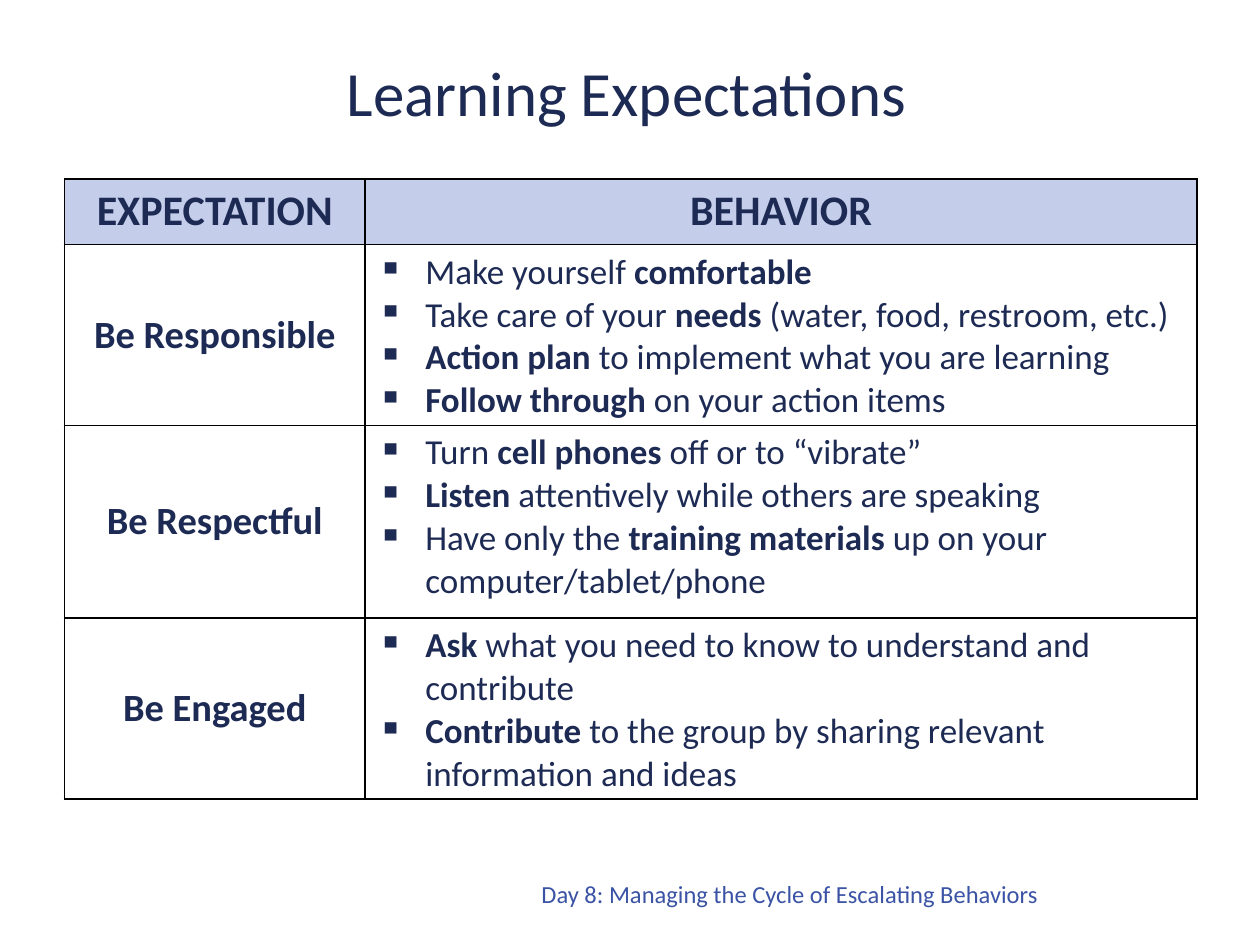
from lxml.etree import SubElement
from pptx import Presentation
from pptx.dml.color import RGBColor
from pptx.enum.text import MSO_ANCHOR as Anchor, PP_ALIGN as Align
from pptx.oxml.ns import qn
from pptx.util import Cm, Pt

TITLE = "Learning Expectations"
FOOTER = "Day 8: Managing the Cycle of Escalating Behaviors"
HEADINGS = ("EXPECTATION", "BEHAVIOR")
EXPECTATIONS = [
    ("Be Responsible", [
        "Make yourself *comfortable*",
        "Take care of your *needs* (water, food, restroom, etc.)",
        "*Action plan* to implement what you are learning",
        "*Follow through* on your action items",
    ]),
    ("Be Respectful", [
        "Turn *cell phones* off or to “vibrate”",
        "*Listen* attentively while others are speaking",
        "Have only the *training materials* up on your computer/tablet/phone",
    ]),
    ("Be Engaged", [
        "*Ask* what you need to know to understand and contribute",
        "*Contribute* to the group by sharing relevant information and ideas",
    ]),
]
COLUMN_WIDTHS = (6.06, 16.77)
ROW_HEIGHTS = (1.32, 3.48, 3.89, 3.48)
THEME = {
    "font": "Calibri",
    "ink": "1D2A53", "footer_ink": "3A53A5", "line": "000000",
    "heading_fill": "C4CDEA", "body_fill": "FFFFFF",
    "title": 36, "heading": 24, "expectation": 22, "behavior": 20, "footer": 14,
}


def style(run, size, ink="ink", bold=False):
    """Apply a theme size and colour to a run."""
    run.font.name, run.font.size, run.font.bold = THEME["font"], Pt(THEME[size]), bold
    run.font.color.rgb = RGBColor.from_string(THEME[ink])


def add_label(slide, text, bounds, size, align, ink="ink"):
    """Add a one-line text box."""
    frame = slide.shapes.add_textbox(*map(Cm, bounds)).text_frame
    frame.word_wrap = True
    frame.vertical_anchor = Anchor.MIDDLE
    frame.text = text
    line = frame.paragraphs[0]
    line.alignment = align
    style(line.runs[0], size, ink)


def finish_cell(cell, fill):
    """Outline a cell on all sides and fill it."""
    properties = cell._tc.get_or_add_tcPr()
    for side in ("lnL", "lnR", "lnT", "lnB"):
        border = SubElement(properties, qn(f"a:{side}"), w=str(Pt(1)))
        solid = SubElement(border, qn("a:solidFill"))
        SubElement(solid, qn("a:srgbClr"), val=THEME["line"])
    cell.fill.solid()
    cell.fill.fore_color.rgb = RGBColor.from_string(THEME[fill])


def fill_label(cell, text, size, fill):
    """Write a centred bold label into a cell."""
    cell.text_frame.text = text
    line = cell.text_frame.paragraphs[0]
    line.alignment = Align.CENTER
    style(line.runs[0], size, bold=True)
    finish_cell(cell, fill)


def add_bullet(paragraph):
    """Give a paragraph a square bullet with a hanging indent."""
    properties = paragraph._p.get_or_add_pPr()
    properties.set("marL", str(Cm(0.96)))
    properties.set("indent", str(-Cm(0.96)))
    colour = SubElement(properties, qn("a:buClr"))
    SubElement(colour, qn("a:srgbClr"), val=THEME["ink"])
    SubElement(properties, qn("a:buChar"), char="▪")
    tabs = SubElement(properties, qn("a:tabLst"))
    SubElement(tabs, qn("a:tab"), pos=str(Cm(1.27)), algn="l")


def fill_behaviors(cell, behaviors):
    """Write bulleted behaviors, with starred words in bold."""
    frame = cell.text_frame
    for index, behavior in enumerate(behaviors):
        paragraph = frame.add_paragraph() if index else frame.paragraphs[0]
        add_bullet(paragraph)
        for part, words in enumerate(behavior.split("*")):
            if words:
                run = paragraph.add_run()
                run.text = words
                style(run, "behavior", bold=part % 2 == 1)
    finish_cell(cell, "body_fill")


def add_expectations(slide):
    """Add the table of expectations and behaviors."""
    table = slide.shapes.add_table(
        len(ROW_HEIGHTS), len(COLUMN_WIDTHS), Cm(1.3), Cm(3.61),
        Cm(sum(COLUMN_WIDTHS)), Cm(sum(ROW_HEIGHTS))).table
    table.horz_banding = False
    for column, width in zip(table.columns, COLUMN_WIDTHS):
        column.width = Cm(width)
    for row, height in zip(table.rows, ROW_HEIGHTS):
        row.height = Cm(height)
    for column, heading in enumerate(HEADINGS):
        fill_label(table.cell(0, column), heading, "heading", "heading_fill")
    for row, (expectation, behaviors) in enumerate(EXPECTATIONS, 1):
        label = table.cell(row, 0)
        fill_label(label, expectation, "expectation", "body_fill")
        label.vertical_anchor = Anchor.MIDDLE
        fill_behaviors(table.cell(row, 1), behaviors)


def main():
    """Build and save the slide."""
    deck = Presentation()
    deck.slide_width, deck.slide_height = Cm(25.4), Cm(19.05)
    slide = deck.slides.add_slide(deck.slide_layouts[6])
    add_label(slide, FOOTER, (7.24, 17.6, 13.94, 0.85), "footer", Align.RIGHT, "footer_ink")
    add_expectations(slide)
    add_label(slide, TITLE, (1.3, 0.97, 22.66, 1.73), "title", Align.CENTER)
    deck.save("out.pptx")


if __name__ == "__main__":
    main()
